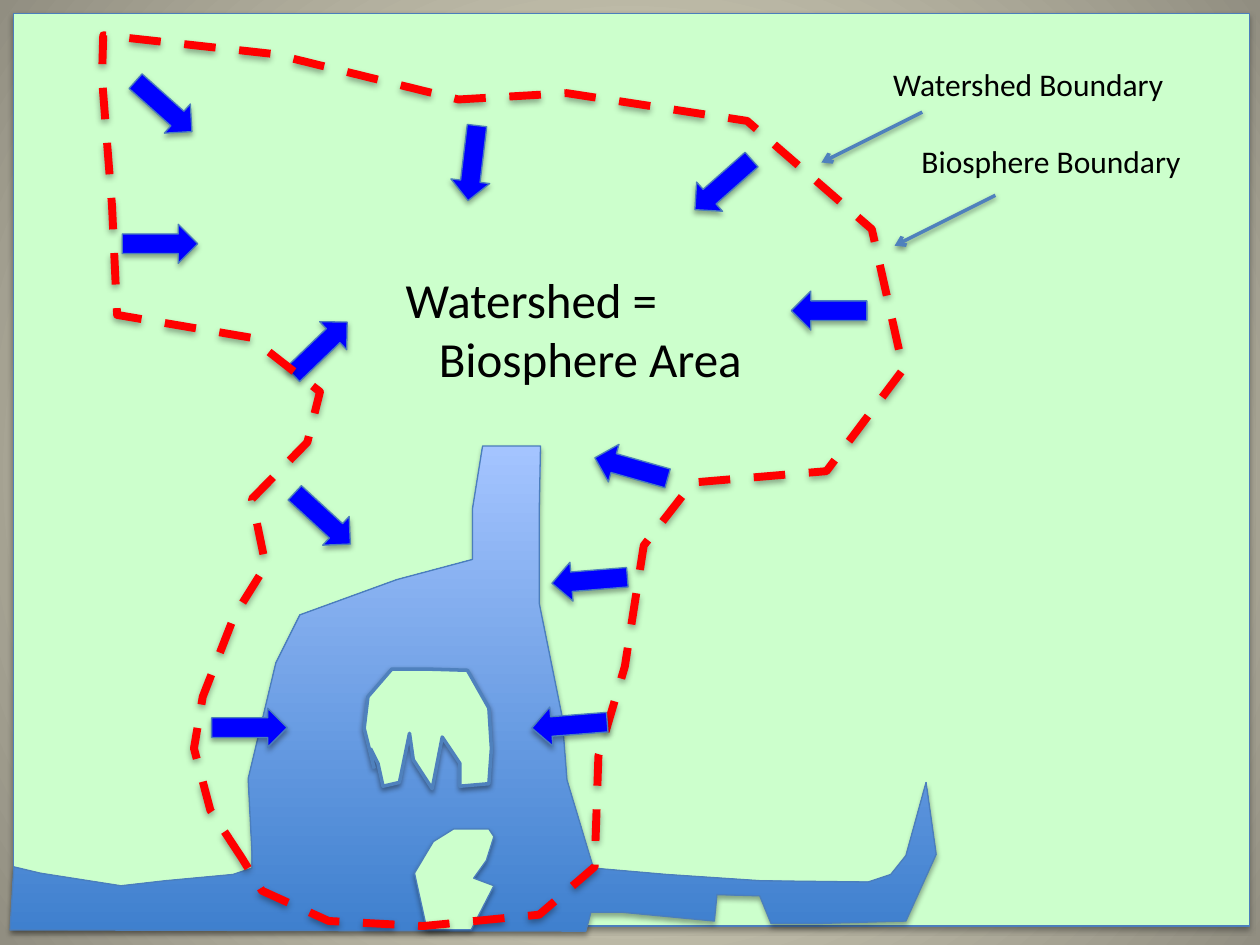
import dataclasses

import lxml.etree
import pptx
import pptx.dml.color
import pptx.enum.dml
import pptx.enum.shapes
import pptx.enum.text
import pptx.oxml
import pptx.oxml.ns
import pptx.util

GRID = 2.54  # centimetres per grid square; the slide is 10 by 7.5 squares
ARROW_SIZE = (0.6, 0.31)

LAND = (0.11, 0.11, 9.81, 7.24)

WATER = [
    (0.32, 6.93), (0.96, 7.03), (1.31, 6.99), (1.85, 6.94), (2, 6.89), (2, 6.76),
    (1.97, 6.18), (2.19, 5.26), (2.38, 4.88), (3.15, 4.6), (3.75, 4.44), (3.75, 4.04),
    (3.83, 3.54), (4.29, 3.54), (4.28, 4.04), (4.28, 4.79), (4.46, 5.68), (4.5, 6.19),
    (4.71, 6.89), (5.29, 6.94), (6.04, 6.99), (6.89, 7), (7.07, 6.94), (7.19, 6.79),
    (7.35, 6.21), (7.43, 6.78), (7.19, 7.31), (6.47, 7.33), (6.12, 7.33), (6.03, 7.11),
    (5.69, 7.1), (5.67, 7.31), (4.94, 7.24), (4.69, 7.24), (4.65, 7.39), (0.08, 7.38),
    (0.11, 6.88),
]

NORTH_ISLAND = [
    (2.97, 6.1), (2.89, 5.78), (2.92, 5.53), (3.11, 5.31), (3.38, 5.31), (3.71, 5.32),
    (3.88, 5.62), (3.9, 5.94), (3.88, 6.22), (3.65, 6.24), (3.65, 6.06), (3.51, 5.85),
    (3.43, 6.26), (3.28, 6.03), (3.25, 5.82), (3.17, 6.21), (3.04, 6.24), (3, 6.06),
    (2.94, 5.94),
]

SOUTH_ISLAND = [
    (3.88, 6.58), (3.6, 6.58), (3.44, 6.68), (3.29, 6.93), (3.39, 7.38), (3.74, 7.38),
    (3.92, 7.03), (3.76, 6.97), (3.86, 6.83), (3.92, 6.64),
]

BOUNDARY = [
    (1.92, 6.81), (1.67, 6.43), (1.54, 5.94), (1.61, 5.53), (1.86, 4.89), (2.11, 4.49),
    (2, 3.96), (2.44, 3.51), (2.54, 3.11), (1.99, 2.68), (0.93, 2.5), (0.89, 1.64),
    (0.81, 0.62), (0.82, 0.28), (2.18, 0.43), (3.64, 0.79), (4.5, 0.74), (5.93, 0.96),
    (6.92, 1.82), (7.17, 2.93), (6.56, 3.74), (5.5, 3.83), (5.11, 4.33), (4.96, 5.29),
    (4.75, 6), (4.72, 6.88), (4.28, 7.26), (3.36, 7.35), (2.61, 7.31), (2.08, 7.07),
]

# Left, top and rotation of each flow arrow
UPLAND_FLOWS = [
    (2.24, 2.61, 316), (0.97, 1.78, 0), (1, 0.69, 41.8),
    (5.44, 1.31, 138.5), (6.28, 2.31, 180), (4.71, 3.56, 195.8),
    (4.38, 4.45, 175.4), (3.45, 1.14, 96.8), (2.26, 3.96, 42.6),
]
BAY_FLOWS = [(4.22, 5.6, 175.5), (1.68, 5.62, 0)]

POINTERS = [((7.32, 0.89), (6.52, 1.29)), ((7.9, 1.55), (7.1, 1.95))]


def color(value):
    return pptx.dml.color.RGBColor.from_string(value)


@dataclasses.dataclass(frozen=True)
class Theme:
    font: str = "Calibri"
    title_size: int = 28
    label_size: int = 18
    text: str = "000000"
    land: str = "CCFFCC"
    flow: str = "0000FF"
    boundary: str = "FF0000"
    outline: str = "4B7EBC"
    accent: str = "4F81BD"
    water: tuple = ("3F80CE", "A4C4FF")
    background: tuple = ("FCF7DD", "918E81")


def grid(squares):
    return pptx.util.Cm(squares * GRID)


def write(para, text, *, font, size, fill, indent=0, space_before=0):
    if indent:
        para._p.get_or_add_pPr().set("marL", str(pptx.util.Cm(indent)))
    if space_before:
        para.space_before = pptx.util.Pt(space_before)
    span = para.add_run()
    span.text = text
    span.font.name = font
    span.font.size = pptx.util.Pt(size)
    span.font.color.rgb = color(fill)


def add_shadow(shape, opacity=35, distance=1.8):
    namespace = pptx.oxml.ns.nsdecls("a")
    shape._element.spPr.append(pptx.oxml.parse_xml(
        f'<a:effectLst {namespace}><a:outerShdw blurRad="{pptx.util.Pt(3.1)}" '
        f'dist="{pptx.util.Pt(distance)}" dir="5400000" rotWithShape="0">'
        f'<a:srgbClr val="000000"><a:alpha val="{opacity * 1000}"/></a:srgbClr>'
        f'</a:outerShdw></a:effectLst>'))


def set_gradient(fill, colors):
    fill.gradient()
    for stop, value in zip(fill.gradient_stops, colors):
        stop.color.rgb = color(value)


class WatershedSlide:
    def __init__(self, slide, theme):
        self.slide = slide
        self.theme = theme

    def background(self):
        """Radial gradient spreading from the centre of the slide."""
        set_gradient(self.slide.background.fill, self.theme.background)
        gradient = self.slide.element.find(".//" + pptx.oxml.ns.qn("a:gradFill"))
        gradient.remove(gradient.find(pptx.oxml.ns.qn("a:lin")))
        radial = lxml.etree.SubElement(gradient, pptx.oxml.ns.qn("a:path"), path="circle")
        lxml.etree.SubElement(radial, pptx.oxml.ns.qn("a:fillToRect"),
                              l="50000", t="50000", r="50000", b="50000")

    def outline(self, shape, line=None, width=0.75, **shadow):
        shape.line.color.rgb = color(line or self.theme.outline)
        shape.line.width = pptx.util.Pt(width)
        add_shadow(shape, **shadow)

    def preset(self, kind, left, top, width, height, fill):
        shape = self.slide.shapes.add_shape(kind, *map(grid, (left, top, width, height)))
        shape.fill.solid()
        shape.fill.fore_color.rgb = color(fill)
        self.outline(shape)
        return shape

    def land(self):
        self.preset(pptx.enum.shapes.MSO_SHAPE.RECTANGLE, *LAND, self.theme.land)

    def flow(self, left, top, rotation):
        arrow = self.preset(pptx.enum.shapes.MSO_SHAPE.RIGHT_ARROW, left, top,
                            *ARROW_SIZE, self.theme.flow)
        arrow.rotation = rotation

    def area(self, points, fill=None, closed=True, **outline):
        """Polygon; fill is one colour, a pair for a rising gradient, or None."""
        corners = [(grid(x), grid(y)) for x, y in points]
        builder = self.slide.shapes.build_freeform(*corners[0])
        builder.add_line_segments(corners[1:], close=closed)
        shape = builder.convert_to_shape()
        if fill is None:
            shape.fill.background()
        elif isinstance(fill, tuple):
            set_gradient(shape.fill, fill)
            shape.fill.gradient_angle = 90
        else:
            shape.fill.solid()
            shape.fill.fore_color.rgb = color(fill)
        self.outline(shape, **outline)
        return shape

    def label(self, left, top, width, height, lines, size, indent, space_before=0):
        """Two-line label whose second line is indented."""
        box = self.slide.shapes.add_textbox(*map(grid, (left, top, width, height)))
        frame = box.text_frame
        frame.word_wrap = False
        frame.auto_size = pptx.enum.text.MSO_AUTO_SIZE.SHAPE_TO_FIT_TEXT
        style = {"font": self.theme.font, "size": size, "fill": self.theme.text}
        write(frame.paragraphs[0], lines[0], **style)
        write(frame.add_paragraph(), lines[1], indent=indent,
              space_before=space_before, **style)

    def pointer(self, start, end):
        line = self.slide.shapes.add_connector(
            pptx.enum.shapes.MSO_CONNECTOR.STRAIGHT, *map(grid, start + end))
        self.outline(line, self.theme.accent, 2, opacity=38, distance=1.6)
        lxml.etree.SubElement(line.line._get_or_add_ln(),
                              pptx.oxml.ns.qn("a:tailEnd"), type="arrow")


def main():
    deck = pptx.Presentation()
    deck.slide_width, deck.slide_height = grid(10), grid(7.5)
    theme = Theme()
    page = WatershedSlide(deck.slides.add_slide(deck.slide_layouts[6]), theme)

    page.background()
    page.land()
    for flow in UPLAND_FLOWS:
        page.flow(*flow)
    page.label(3.12, 2.09, 2.91, 1.04, ("Watershed =", "Biosphere Area"),
               theme.title_size, indent=0.67)
    page.area(WATER, theme.water)
    page.area(NORTH_ISLAND, theme.land, closed=False, line=theme.accent, width=2,
              opacity=38, distance=1.6)
    page.area(SOUTH_ISLAND, theme.land)
    boundary = page.area(BOUNDARY, line=theme.boundary, width=4.5)
    boundary.line.dash_style = pptx.enum.dml.MSO_LINE.DASH
    for flow in BAY_FLOWS:
        page.flow(*flow)
    page.label(6.99, 0.47, 2.51, 1.01, ("Watershed Boundary", "Biosphere Boundary"),
               theme.label_size, indent=0.57, space_before=22)
    for pointer in POINTERS:
        page.pointer(*pointer)

    deck.save("out.pptx")


if __name__ == "__main__":
    main()
